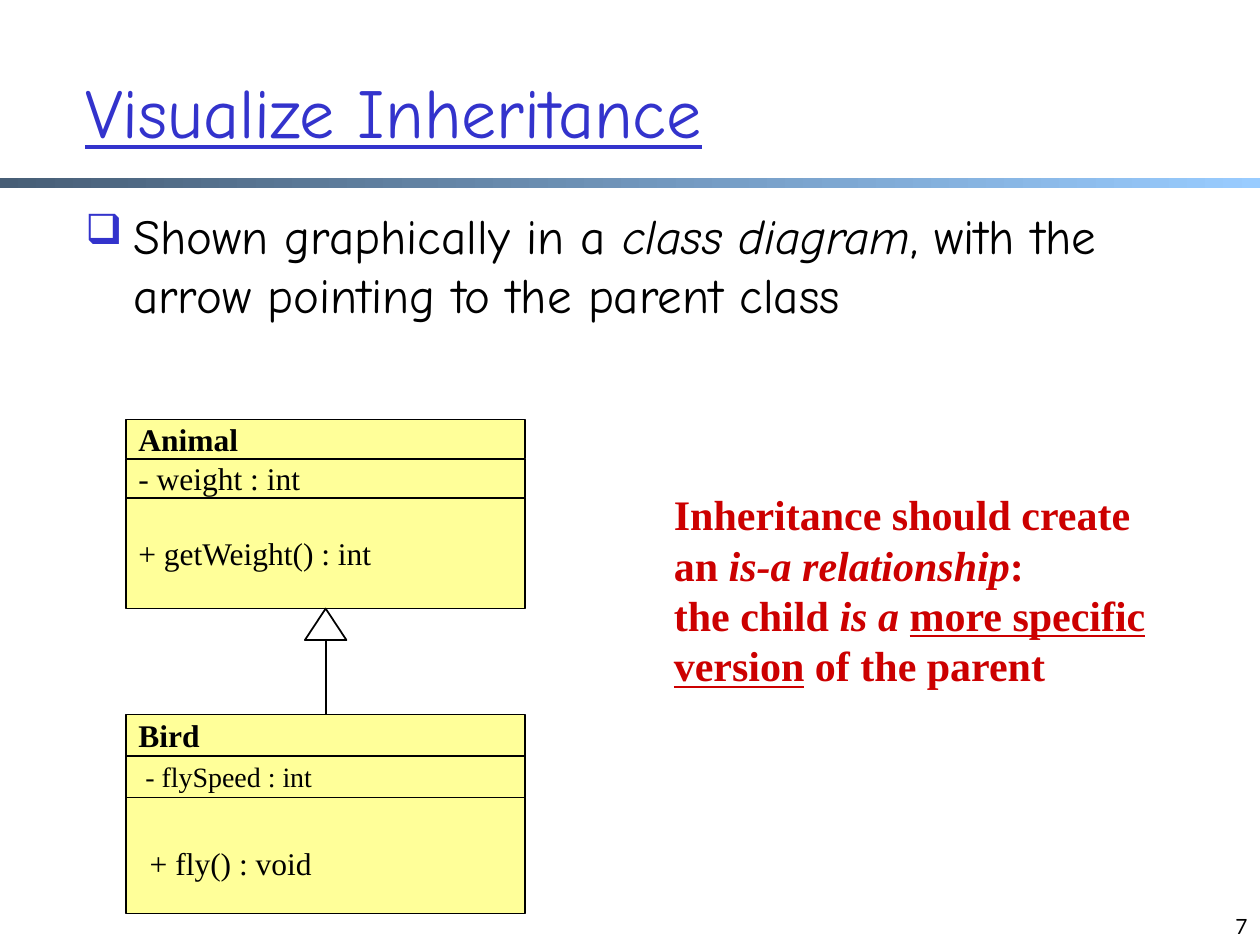
"""Build a slide that explains inheritance with a small class diagram."""
from dataclasses import dataclass

from lxml.etree import SubElement
from pptx import Presentation
from pptx.dml.color import RGBColor
from pptx.enum.shapes import MSO_CONNECTOR, MSO_SHAPE
from pptx.enum.text import MSO_ANCHOR, PP_ALIGN
from pptx.oxml.ns import qn
from pptx.util import Inches, Pt


@dataclass(frozen=True)
class Theme:
    accent: RGBColor = RGBColor(0x33, 0x33, 0xCC)
    ink: RGBColor = RGBColor(0, 0, 0)
    remark: RGBColor = RGBColor(0xCC, 0, 0)
    paper: RGBColor = RGBColor(0xFF, 0xFF, 0xFF)
    class_fill: RGBColor = RGBColor(0xFF, 0xFF, 0x99)
    bar_start: RGBColor = RGBColor(0x47, 0x5E, 0x76)
    bar_end: RGBColor = RGBColor(0x99, 0xCC, 0xFF)
    heading_font: str = "Comic Neue"
    diagram_font: str = "Times New Roman"
    number_font: str = "Lato"
    title_size: int = 40
    body_size: int = 28
    remark_size: int = 24
    member_size: int = 18
    small_size: int = 16
    number_size: int = 12


class SlideBuilder:
    def __init__(self, page, theme):
        self.page = page
        self.theme = theme

    def fill_text(self, frame, paragraphs, font, size, color, align=PP_ALIGN.LEFT):
        """Fill a frame with paragraphs made of (text, style letters) spans."""
        frame.word_wrap = True
        for index, spans in enumerate(paragraphs):
            para = frame.add_paragraph() if index else frame.paragraphs[0]
            para.alignment = align
            for text, style in spans:
                span = para.add_run()
                span.text = text
                span.font.name = font
                span.font.size = Pt(size)
                span.font.color.rgb = color
                span.font.bold = "b" in style
                span.font.italic = "i" in style
                span.font.underline = "u" in style

    def text(self, left, top, width, height, paragraphs, font, size, color,
             anchor=MSO_ANCHOR.TOP, align=PP_ALIGN.LEFT):
        box = self.page.shapes.add_textbox(
            Inches(left), Inches(top), Inches(width), Inches(height))
        box.text_frame.vertical_anchor = anchor
        self.fill_text(box.text_frame, paragraphs, font, size, color, align)
        return box

    def bullet(self, para, symbol, indent):
        properties = para._p.get_or_add_pPr()
        properties.set("marL", str(Inches(indent)))
        properties.set("indent", str(-Inches(indent)))
        color = SubElement(properties, qn("a:buClr"))
        SubElement(color, qn("a:srgbClr"), val=str(self.theme.accent))
        SubElement(properties, qn("a:buSzPct"), val="85000")
        SubElement(properties, qn("a:buChar"), char=symbol)

    def shape(self, kind, left, top, width, height, fill):
        shape = self.page.shapes.add_shape(
            kind, Inches(left), Inches(top), Inches(width), Inches(height))
        shape.shadow.inherit = False
        shape.fill.solid()
        shape.fill.fore_color.rgb = fill
        shape.line.color.rgb = self.theme.ink
        shape.line.width = Pt(1)
        return shape

    def gradient_bar(self, top, height):
        bar = self.shape(MSO_SHAPE.RECTANGLE, 0, top, 10, height, self.theme.bar_start)
        bar.line.fill.background()
        bar.fill.gradient()
        bar.fill.gradient_angle = 0
        for stop, color in zip(bar.fill.gradient_stops,
                               (self.theme.bar_start, self.theme.bar_end)):
            stop.color.rgb = color

    def class_box(self, left, top, width, sections):
        """Stack (height, text, style, size) sections and return their shapes."""
        boxes = []
        for height, text, style, size in sections:
            box = self.shape(MSO_SHAPE.RECTANGLE, left, top, width, height,
                             self.theme.class_fill)
            box.text_frame.vertical_anchor = MSO_ANCHOR.MIDDLE
            if text:
                self.fill_text(box.text_frame, [[(text, style)]],
                               self.theme.diagram_font, size, self.theme.ink)
            boxes.append(box)
            top += height
        return boxes

    def inheritance_arrow(self, child, parent, width, height):
        line = self.page.shapes.add_connector(MSO_CONNECTOR.STRAIGHT, 0, 0, 0, 0)
        line.begin_connect(child, 0)
        line.end_connect(parent, 2)
        line.line.color.rgb = self.theme.ink
        line.line.width = Pt(1)
        SubElement(line._element.spPr, qn("a:effectLst"))
        center = (parent.left + parent.width / 2) / Inches(1)
        bottom = (parent.top + parent.height) / Inches(1)
        self.shape(MSO_SHAPE.ISOSCELES_TRIANGLE, center - width / 2, bottom,
                   width, height, self.theme.paper)


def main():
    deck = Presentation()
    deck.slide_width, deck.slide_height = Inches(10), Inches(7.5)
    theme = Theme()
    slide = SlideBuilder(deck.slides.add_slide(deck.slide_layouts[6]), theme)

    slide.gradient_bar(1.41, 0.08)
    slide.text(7.67, 7, 2.33, 0.5, [[("7", "")]], theme.number_font,
               theme.number_size, theme.ink, MSO_ANCHOR.BOTTOM, PP_ALIGN.RIGHT)
    slide.text(0.58, 0.25, 8.5, 1.25, [[("Visualize Inheritance", "u")]],
               theme.heading_font, theme.title_size, theme.accent, MSO_ANCHOR.MIDDLE)

    body = slide.text(
        0.58, 1.58, 8.5, 1.58,
        [[("Shown graphically in a ", ""), ("class diagram", "i"),
          (", with the arrow pointing to the parent class", "")]],
        theme.heading_font, theme.body_size, theme.ink)
    intro = body.text_frame.paragraphs[0]
    intro.space_before = Pt(0.2 * theme.body_size)
    slide.bullet(intro, "❑", 0.38)

    slide.text(
        5.25, 3.83, 4.17, 1.72,
        [[("Inheritance should create an ", "b"), ("is-a relationship", "bi"), (":", "b")],
         [("the child ", "b"), ("is a ", "bi"), ("more specific version", "bu"),
          (" of the parent", "b")]],
        theme.diagram_font, theme.remark_size, theme.remark)

    animal = slide.class_box(1, 3.33, 3.17, [
        (0.31, "Animal", "b", theme.member_size),
        (0.31, "- weight : int", "", theme.member_size),
        (0.88, "+ getWeight() : int", "", theme.member_size)])
    bird = slide.class_box(1, 5.67, 3.17, [
        (0.33, "Bird", "b", theme.member_size),
        (0.33, " - flySpeed : int", "", theme.small_size),
        (0.92, "", "", theme.member_size)])
    slide.inheritance_arrow(bird[0], animal[-1], 0.33, 0.25)
    slide.text(1.09, 6.65, 1.6, 0.4, [[("+ fly() : void", "")]],
               theme.diagram_font, theme.member_size, theme.ink)

    deck.save("out.pptx")


if __name__ == "__main__":
    main()
